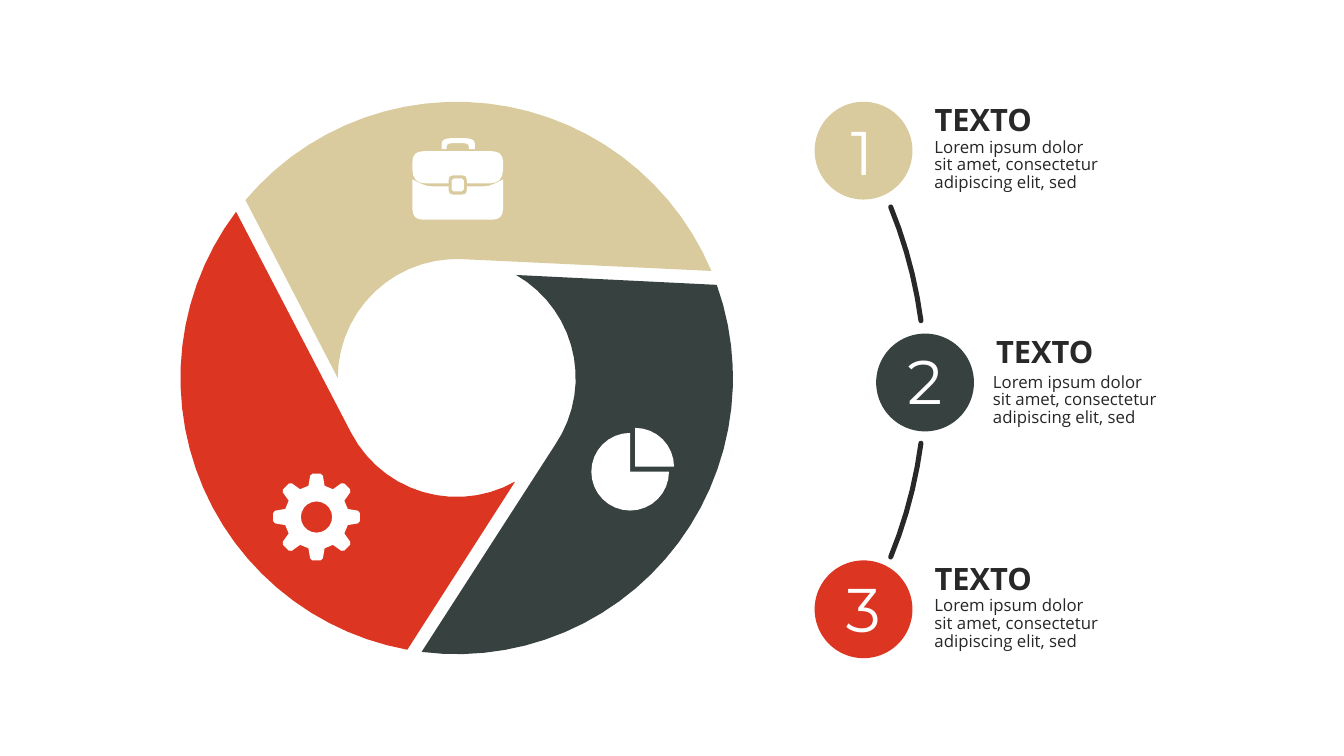
from math import acos, ceil, cos, degrees, dist, radians, sin

from pptx import Presentation
from pptx import util as u
from pptx.dml.color import RGBColor
from pptx.enum import shapes, text

PX = 9144  # one px is a hundredth of an inch
SAND, SLATE, RED = "D9CB9E", "374140", "DC3522"
WHITE, INK, GREY = "FFFFFF", "282828", "262626"
TITLE = {"name": "Open Sans", "size": u.Pt(22), "bold": True}
BODY = {"name": "Open Sans", "size": u.Pt(12)}
DIGIT = {"name": "Montserrat", "size": u.Pt(44)}
LOREM = "Lorem ipsum dolor sit amet, consectetur adipiscing elit, sed"


def hue(code):
    return RGBColor.from_string(code)


def polar(mid, rad, deg):
    return mid[0] + rad * cos(radians(deg)), mid[1] + rad * sin(radians(deg))


def arc(mid, rad, start, end):
    """Points on an arc, a fifth of a px true; degrees run clockwise."""
    step = 2 * degrees(acos(1 - 0.2 / rad))
    count = ceil(abs(end - start) / step)
    return [polar(mid, rad, start + (end - start) * i / count)
            for i in range(count + 1)]


def toward(a, b, reach):
    """The point on the way from a to b, at most halfway along."""
    part = min(0.5, reach / dist(a, b))
    return a[0] + (b[0] - a[0]) * part, a[1] + (b[1] - a[1]) * part


def soften(corners):
    """Outline through (x, y, radius) corners, each one rounded."""
    out = []
    for i, (x, y, rad) in enumerate(corners):
        if not rad:
            out.append((x, y))
            continue
        a = toward((x, y), corners[i - 1][:2], rad)
        b = toward((x, y), corners[(i + 1) % len(corners)][:2], rad)
        count = 1 if rad <= 2 else 2 if rad <= 6 else 4
        for t in (k / count for k in range(count + 1)):
            out.append(tuple((1 - t) ** 2 * p + 2 * t * (1 - t) * q + t * t * r
                             for p, q, r in zip(a, (x, y), b)))
    return out


class Deck:
    def __init__(self, wide, high):
        self.prs = Presentation()
        self.prs.slide_width, self.prs.slide_height = wide * PX, high * PX
        self.slide = self.prs.slides.add_slide(self.prs.slide_layouts[6])

    def paint(self, shape, code):
        shape.shadow.inherit = False
        shape.fill.solid()
        shape.fill.fore_color.rgb = hue(code)
        shape.line.fill.background()

    def disc(self, x, y, size, code):
        kind = shapes.MSO_SHAPE.OVAL
        box = [v * PX for v in (x, y, size, size)]
        self.paint(self.slide.shapes.add_shape(kind, *box), code)

    def form(self, code, *loops):
        """One filled outline made of closed loops of points."""
        loops = [[(x * PX, y * PX) for x, y in loop] for loop in loops]
        pen = self.slide.shapes.build_freeform(*loops[0][0], scale=1.0)
        for i, loop in enumerate(loops):
            if i:
                pen.move_to(*loop[0])
            pen.add_line_segments(loop[1:], close=True)
        self.paint(pen.convert_to_shape(), code)

    def label(self, words, box, font, code, inset=(0, 0), gap=1.0):
        frame = self.slide.shapes.add_textbox(*[v * PX for v in box]).text_frame
        side, edge = (v * PX for v in inset)
        look = {"word_wrap": True, "vertical_anchor": text.MSO_ANCHOR.TOP,
                "margin_left": side, "margin_right": side,
                "margin_top": edge, "margin_bottom": edge}
        for key, value in look.items():
            setattr(frame, key, value)
        para = frame.paragraphs[0]
        para.line_spacing = gap
        run = para.add_run()
        run.text = words
        for key, value in font.items():
            setattr(run.font, key, value)
        run.font.color.rgb = hue(code)


def wheel(deck):
    hub = 453, 375
    parts = [  # colour, outer arc, inner arc
        (SLATE, (-19.7, 97.3), (34, -60)),
        (RED, (100.3, 217), (152.6, 60.6)),
        (SAND, (220.1, 337.2), (273, 180)),
    ]
    for code, outer, inner in parts:
        deck.form(code, arc(hub, 274, *outer) + arc(hub, 118, *inner))


def case(deck):
    grip = [(438, 148, 0), (438, 137, 11), (471, 137, 11), (471, 148, 0),
            (465, 148, 0), (465, 142, 5), (443, 142, 5), (443, 148, 0)]
    lid = [(409, 150, 11), (499, 150, 11), (499, 182, 14), (463, 182, 0),
           (463, 174, 4), (445, 174, 4), (445, 182, 0), (409, 182, 14)]
    base = [(409, 178, 0), (423, 185, 6), (445, 185, 0), (445, 193, 4),
            (463, 193, 4), (463, 185, 0), (485, 185, 6), (499, 178, 0),
            (499, 218, 11), (409, 218, 11)]
    clasp = [(448, 177, 2), (460, 177, 2), (460, 190, 2), (448, 190, 2)]
    deck.form(WHITE, *map(soften, (grip, lid, base, clasp)))


def pie(deck):
    mid = 625, 468
    tip = 630, 463
    deck.form(WHITE, [mid] + arc(mid, 38.5, 0, 270),
              [tip] + arc(tip, 38.5, 270, 360))


def gear(deck):
    mid = 314, 513
    tooth = [(31, -8, 0), (43, -6, 2), (43, 6, 2), (31, 8, 0)]
    rim = []
    for turn in range(0, 360, 45):
        for out, side, rad in tooth:
            spot = polar(polar(mid, out, turn), side, turn + 90)
            rim.append((*spot, rad))
    deck.form(WHITE, soften(rim), arc(mid, 15.5, 360, 0))


def link(deck, start, end):
    """A curved bar with round ends between two discs."""
    mid, rad, half = (458, 379), 459.5, 2.5
    deck.form(INK, arc(mid, rad + half, start, end)
              + arc(polar(mid, rad, end), half, end, end + 180)
              + arc(mid, rad - half, end, start)
              + arc(polar(mid, rad, start), half, start + 180, start + 360))


def main():
    deck = Deck(1333, 750)
    wheel(deck)
    for icon in (case, pie, gear):
        icon(deck)
    for start, end in ((-22.2, -7.6), (7.6, 22.2)):
        link(deck, start, end)
    steps = [  # colour, disc corner, digit offset, body offset
        (SAND, (808, 101), (36, 12), (109, 32)),
        (SLATE, (869, 331), (31, 9), (106, 35)),
        (RED, (808, 556), (31, 10), (109, 32)),
    ]
    for num, (code, (x, y), digit, body) in enumerate(steps, 1):
        deck.disc(x, y, 97, code)
        deck.label(str(num), (x + digit[0], y + digit[1], 73, 93), DIGIT, WHITE)
        deck.label("TEXTO", (x + 119, y - 1, 162, 50), TITLE, INK)
        deck.label(LOREM, (x + body[0], y + body[1], 186, 71), BODY, GREY,
                   inset=(10, 5), gap=0.88)
    deck.prs.save("out.pptx")


if __name__ == "__main__":
    main()
